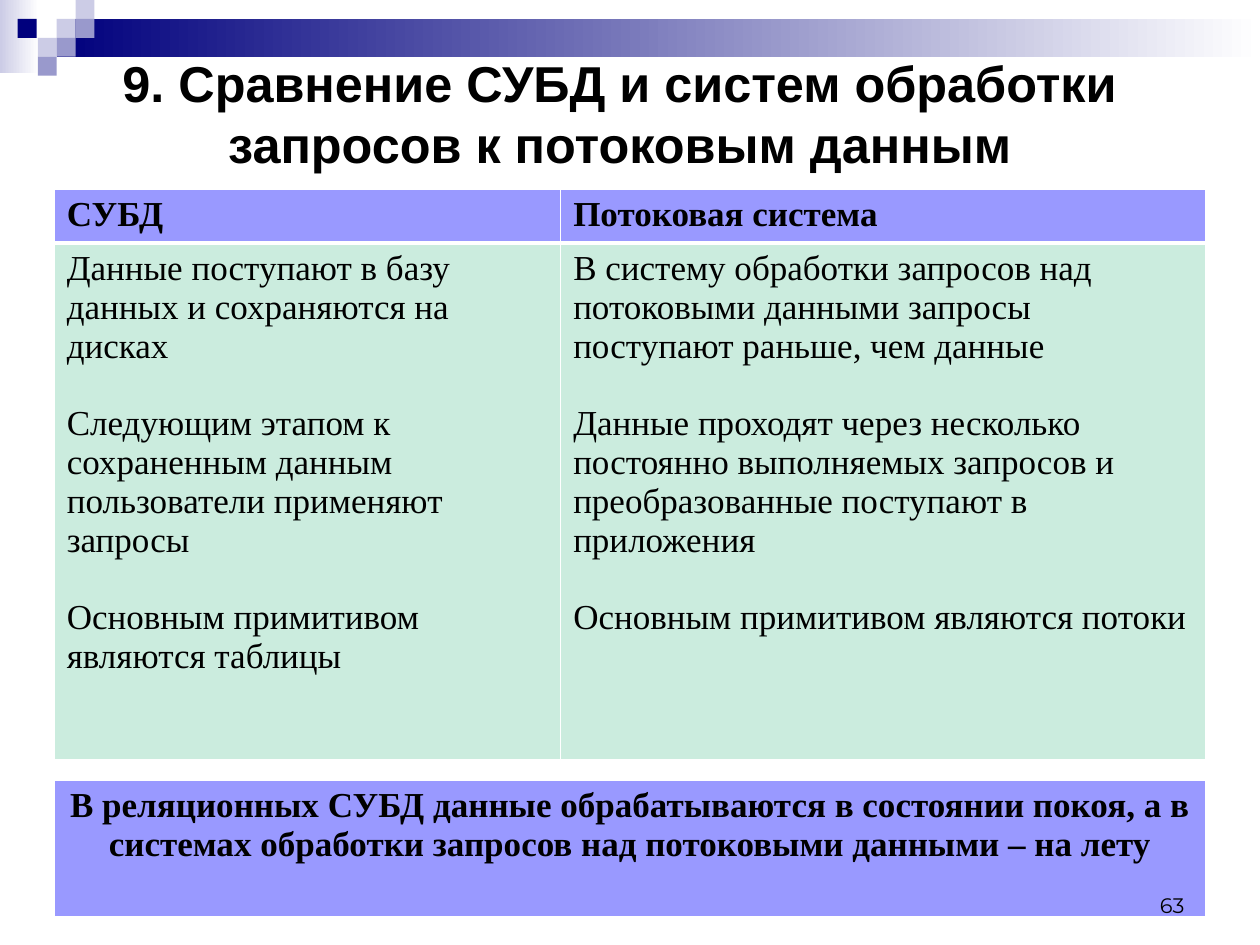
"""Build a slide comparing database systems with stream query systems."""
from typing import NamedTuple

from lxml.etree import SubElement
from pptx import Presentation
from pptx.dml.color import RGBColor
from pptx.enum.shapes import MSO_SHAPE
from pptx.enum.text import MSO_ANCHOR, MSO_AUTO_SIZE, PP_ALIGN
from pptx.oxml.ns import qn
from pptx.util import Inches, Pt

COLORS = {
    "navy": "00007D",
    "pale": "CCCCE6",
    "mauve": "9999CC",
    "header": "9999FF",
    "body": "CBECDE",
    "white": "FFFFFF",
    "black": "000000",
}
SERIF = "Times New Roman"
TABLE_LEFT = 0.43
TILE = 0.15


class Band(NamedTuple):
    """A rectangle that fades to white from left to right."""
    left: float
    top: float
    width: float
    height: float
    color: str


class Tile(NamedTuple):
    """A small corner square."""
    left: float
    top: float
    color: str


class Entry(NamedTuple):
    """The contents and look of one table cell."""
    paragraphs: list[str]
    fill: str
    bold: bool = True
    align: PP_ALIGN = PP_ALIGN.LEFT
    top_line: float = 1
    bottom_line: float = 3


BANDS = [Band(0, 0, 0.31, 0.58, "pale"), Band(0.45, 0.15, 9.55, 0.3, "navy")]
TILES = [
    Tile(0.45, 0.15, "pale"),
    Tile(0.6, 0, "pale"),
    Tile(0.6, 0.15, "mauve"),
    Tile(0.3, 0.3, "pale"),
    Tile(0.14, 0.15, "navy"),
    Tile(0.45, 0.3, "mauve"),
    Tile(0.3, 0.45, "mauve"),
]
DATABASE = [
    "Данные поступают в базу данных и сохраняются на дисках",
    "Следующим этапом к сохраненным данным пользователи применяют запросы",
    "Основным примитивом являются таблицы",
]
STREAM = [
    "В систему обработки запросов над потоковыми данными запросы поступают раньше, чем данные",
    "Данные проходят через несколько постоянно выполняемых запросов и преобразованные поступают в приложения",
    "Основным примитивом являются потоки",
]
COMPARISON = [
    [Entry(["СУБД"], "header"), Entry(["Потоковая система"], "header")],
    [Entry(column, "body", False, top_line=3, bottom_line=1) for column in (DATABASE, STREAM)],
]
CONCLUSION = [[Entry(
    ["В реляционных СУБД данные обрабатываются в состоянии покоя, "
     "а в системах обработки запросов над потоковыми данными – на лету"],
    "header", align=PP_ALIGN.CENTER)]]


def rgb(name: str) -> RGBColor:
    """Look up a named colour."""
    return RGBColor.from_string(COLORS[name])


def style_font(font, name: str, size: float, bold: bool) -> None:
    """Set black text in the given face."""
    font.name, font.size, font.bold = name, Pt(size), bold
    font.color.rgb = rgb("black")


def add_rectangle(page, left: float, top: float, width: float, height: float):
    """Add a rectangle without line or shadow."""
    box = page.shapes.add_shape(
        MSO_SHAPE.RECTANGLE, Inches(left), Inches(top), Inches(width), Inches(height))
    box.shadow.inherit = False
    box.line.fill.background()
    return box


def add_band(page, band: Band) -> None:
    """Draw a fading band."""
    fill = add_rectangle(page, band.left, band.top, band.width, band.height).fill
    fill.gradient()
    fill.gradient_angle = 0
    for stop, color, position in zip(fill.gradient_stops, (band.color, "white"), (0, 1)):
        stop.color.rgb = rgb(color)
        stop.position = position


def add_tile(page, tile: Tile) -> None:
    """Draw a corner square."""
    fill = add_rectangle(page, tile.left, tile.top, TILE, TILE).fill
    fill.solid()
    fill.fore_color.rgb = rgb(tile.color)


def set_borders(cell, top: float, bottom: float) -> None:
    """Give a cell white borders, widths in points."""
    properties = cell._tc.get_or_add_tcPr()
    for side, width in (("L", 1), ("R", 1), ("T", top), ("B", bottom)):
        line = SubElement(properties, qn(f"a:ln{side}"), w=str(Pt(width)))
        SubElement(SubElement(line, qn("a:solidFill")), qn("a:srgbClr"), val=COLORS["white"])


def fill_cell(cell, entry: Entry) -> None:
    """Write and format one cell."""
    set_borders(cell, entry.top_line, entry.bottom_line)
    cell.fill.solid()
    cell.fill.fore_color.rgb = rgb(entry.fill)
    cell.text = "\n".join(entry.paragraphs)
    for index, paragraph in enumerate(cell.text_frame.paragraphs):
        paragraph.alignment = entry.align
        if index:
            paragraph.space_before = Pt(22)
        style_font(paragraph.font, SERIF, 20, entry.bold)


def add_grid(page, top: float, widths: list[float], heights: list[float],
             entries: list[list[Entry]]) -> None:
    """Draw a table from rows of entries."""
    table = page.shapes.add_table(
        len(heights), len(widths), Inches(TABLE_LEFT), Inches(top),
        Inches(sum(widths)), Inches(sum(heights))).table
    table.horz_banding = False
    for column, width in zip(table.columns, widths):
        column.width = Inches(width)
    for row, height, row_entries in zip(table.rows, heights, entries):
        row.height = Inches(height)
        for cell, entry in zip(row.cells, row_entries):
            fill_cell(cell, entry)


def place_title(page, text: str) -> None:
    """Position the title placeholder above the decoration."""
    title = page.shapes.title
    title.left, title.top = Inches(0.67), Inches(0.48)
    title.width, title.height = Inches(8.5), Inches(0.83)
    frame = title.text_frame
    frame.text = text
    frame.word_wrap = True
    frame.auto_size = MSO_AUTO_SIZE.NONE
    frame.vertical_anchor = MSO_ANCHOR.MIDDLE
    paragraph = frame.paragraphs[0]
    paragraph.alignment = PP_ALIGN.CENTER
    style_font(paragraph.font, "Arial", 28.8, True)
    page.shapes._spTree.append(title._element)


def add_page_number(page, number: str) -> None:
    """Write the page number at the bottom right."""
    frame = page.shapes.add_textbox(
        Inches(7.17), Inches(6.83), Inches(2.33), Inches(0.5)).text_frame
    frame.text = number
    frame.word_wrap = True
    frame.vertical_anchor = MSO_ANCHOR.BOTTOM
    paragraph = frame.paragraphs[0]
    paragraph.alignment = PP_ALIGN.RIGHT
    style_font(paragraph.font, "Montserrat", 12, False)


def main() -> None:
    """Build and save the deck."""
    deck = Presentation()
    deck.slide_width, deck.slide_height = Inches(10), Inches(7.5)
    page = deck.slides.add_slide(deck.slide_layouts[5])
    for band in BANDS:
        add_band(page, band)
    for tile in TILES:
        add_tile(page, tile)
    place_title(page, "9. Сравнение СУБД и систем обработки запросов к потоковым данным")
    add_grid(page, 1.5, [4.02, 5.12], [0.43, 4.1], COMPARISON)
    add_grid(page, 6.19, [9.14], [1.1], CONCLUSION)
    add_page_number(page, "63")
    deck.save("out.pptx")


if __name__ == "__main__":
    main()
